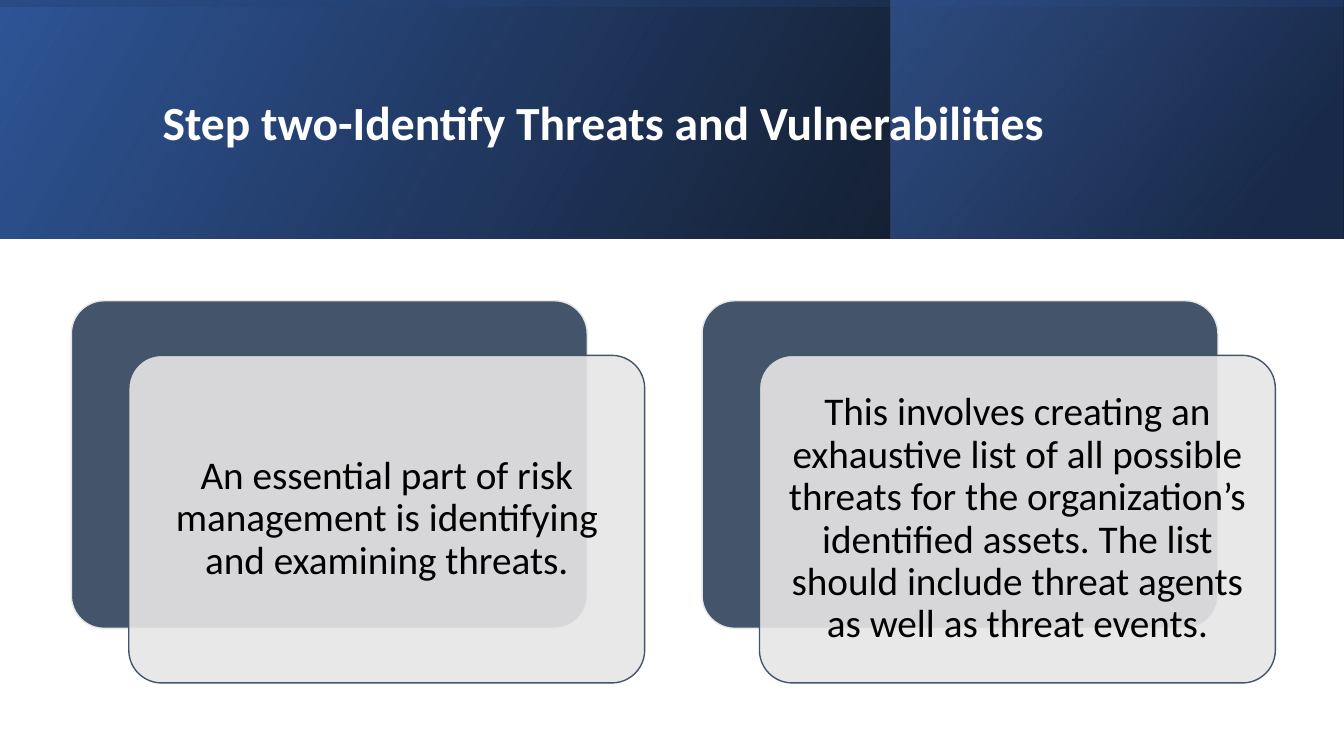
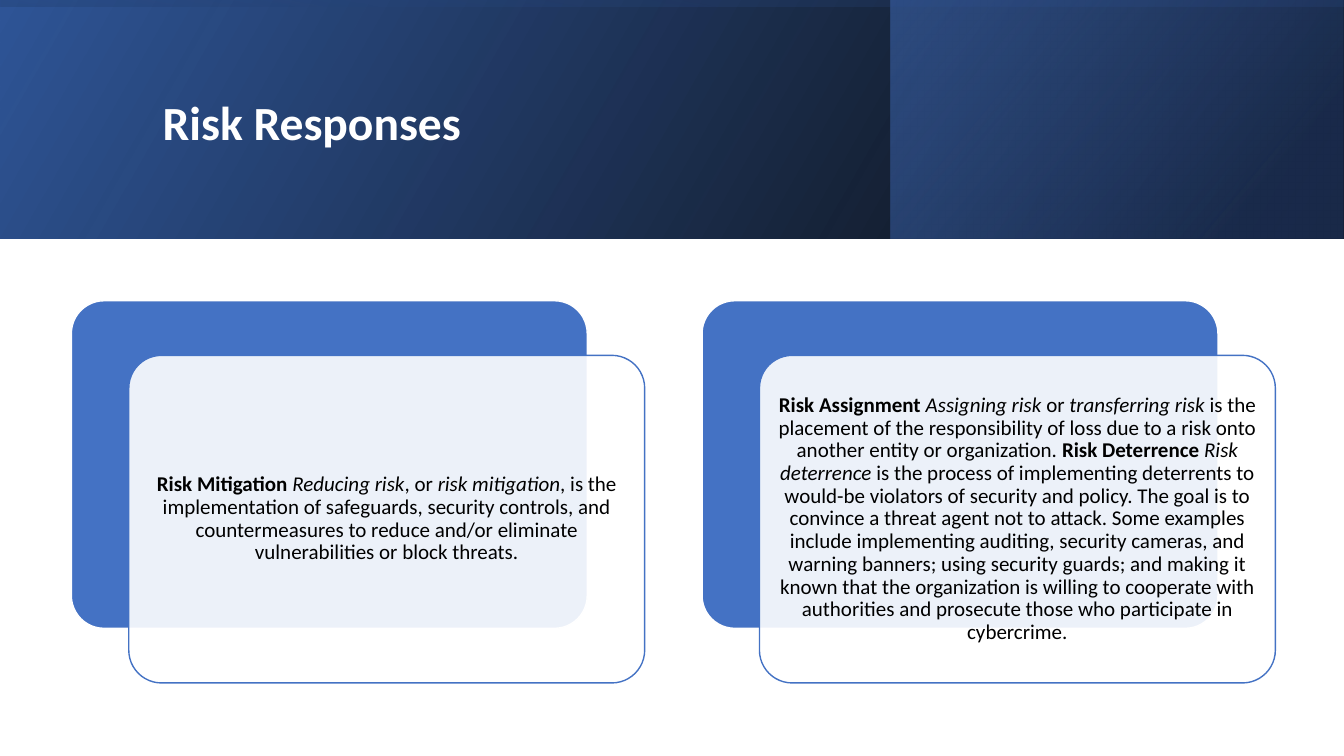
from dataclasses import dataclass

from pptx import Presentation
from pptx.dml.color import RGBColor
from pptx.enum.shapes import MSO_SHAPE
from pptx.enum.text import MSO_ANCHOR, PP_ALIGN
from pptx.oxml import parse_xml
from pptx.oxml.ns import nsdecls, qn
from pptx.shapes.autoshape import Shape
from pptx.slide import Slide
from pptx.util import Pt

FONT = "Calibri"
WHITE, BLACK = "FFFFFF", "000000"
PAGE_WIDTH, PAGE_HEIGHT = 960, 540
BAND_HEIGHT = 170.6

CARD_LEFT, CARD_TOP = 51, 214.8
CARD_WIDTH, CARD_HEIGHT = 368.5, 234
CARD_PITCH = 450.5
FRONT_SHIFT_X, FRONT_SHIFT_Y = 41, 39


@dataclass(frozen=True)
class Stop:
    position: int
    color: str
    opacity: int = 100


@dataclass(frozen=True)
class Band:
    left: float
    top: float
    width: float
    height: float
    angle: int
    stops: tuple[Stop, Stop]
    rotation: int = 0


@dataclass(frozen=True)
class Span:
    text: str
    bold: bool = False
    italic: bool = False


@dataclass(frozen=True)
class CardStyle:
    dark: str
    light: str
    size: int
    inset: float


@dataclass(frozen=True)
class Content:
    title: str
    style: CardStyle
    cards: tuple[tuple[Span, ...], ...]


BANDS = (
    Band(0, 0, PAGE_WIDTH, BAND_HEIGHT, 330, (Stop(0, BLACK, 96), Stop(100, "2F5597"))),
    Band(636.5, 0, 322.8, BAND_HEIGHT, 320, (Stop(19, "203864", 68), Stop(100, "4472C4", 48))),
    # Stands upright before its quarter turn, centred on the header.
    Band((PAGE_WIDTH - BAND_HEIGHT) / 2, (BAND_HEIGHT - PAGE_WIDTH) / 2, BAND_HEIGHT, PAGE_WIDTH,
         350, (Stop(23, "2F5597", 16), Stop(99, BLACK, 45)), rotation=270),
)

SLATE = CardStyle("44546A", "E7E6E6", size=28, inset=8.6)
BLUE = CardStyle("4472C4", WHITE, size=15, inset=4.3)

CONTENTS = (
    Content("Step two-Identify Threats and Vulnerabilities", SLATE, (
        (Span("An essential part of risk management is identifying and examining threats."),),
        (Span("This involves creating an exhaustive list of all possible threats for the "
              "organization’s identified assets. The list should include threat agents as well "
              "as threat events."),),
    )),
    Content("Risk Responses", BLUE, (
        (Span("Risk Mitigation ", bold=True),
         Span("Reducing risk", italic=True),
         Span(", or "),
         Span("risk mitigation", italic=True),
         Span(", is the implementation of safeguards, security controls, and countermeasures "
              "to reduce and/or eliminate vulnerabilities or block threats.")),
        (Span("Risk Assignment ", bold=True),
         Span("Assigning risk ", italic=True),
         Span("or "),
         Span("transferring risk ", italic=True),
         Span("is the placement of the responsibility of loss due to a risk onto another entity "
              "or organization. "),
         Span("Risk Deterrence ", bold=True),
         Span("Risk deterrence ", italic=True),
         Span("is the process of implementing deterrents to would-be violators of security and "
              "policy. The goal is to convince a threat agent not to attack. Some examples "
              "include implementing auditing, security cameras, and warning banners; using "
              "security guards; and making it known that the organization is willing to "
              "cooperate with authorities and prosecute those who participate in cybercrime.")),
    )),
)


def rgb(color: str) -> RGBColor:
    return RGBColor.from_string(color)


def add_filled_shape(page: Slide, kind: MSO_SHAPE, left: float, top: float,
                     width: float, height: float, color: str) -> Shape:
    shape = page.shapes.add_shape(kind, Pt(left), Pt(top), Pt(width), Pt(height))
    shape.shadow.inherit = False
    shape.fill.solid()
    shape.fill.fore_color.rgb = rgb(color)
    return shape


def set_gradient(shape: Shape, angle: int, stops: tuple[Stop, ...]) -> None:
    """Swap the solid fill for a linear gradient with translucent stops."""
    stop_xml = "".join(
        f'<a:gs pos="{stop.position * 1000}"><a:srgbClr val="{stop.color}">'
        f'<a:alpha val="{stop.opacity * 1000}"/></a:srgbClr></a:gs>'
        for stop in stops
    )
    gradient = parse_xml(
        f'<a:gradFill {nsdecls("a")} rotWithShape="1"><a:gsLst>{stop_xml}</a:gsLst>'
        f'<a:lin ang="{angle * 60000}" scaled="0"/></a:gradFill>'
    )
    properties = shape.element.spPr
    properties.replace(properties.find(qn("a:solidFill")), gradient)


def set_opacity(shape: Shape, percent: int) -> None:
    color = shape.element.spPr.find(qn("a:solidFill")).find(qn("a:srgbClr"))
    color.append(parse_xml(f'<a:alpha {nsdecls("a")} val="{percent * 1000}"/>'))


def add_band(page: Slide, band: Band) -> None:
    """Draw a mirrored gradient band behind the title."""
    shape = add_filled_shape(page, MSO_SHAPE.RECTANGLE, band.left, band.top,
                             band.width, band.height, band.stops[0].color)
    set_gradient(shape, band.angle, band.stops)
    shape.line.fill.background()
    shape.rotation = band.rotation
    shape.element.spPr.find(qn("a:xfrm")).set("flipH", "1")
    page.shapes.title.element.addprevious(shape.element)


def set_title(page: Slide, text: str) -> None:
    title = page.shapes.title
    title.left, title.top, title.width, title.height = Pt(109), Pt(27), Pt(765), Pt(124)
    frame = title.text_frame
    frame.text = text
    frame.vertical_anchor = MSO_ANCHOR.MIDDLE
    para = frame.paragraphs[0]
    para.alignment = PP_ALIGN.LEFT
    para.line_spacing = 0.9
    para.font.name, para.font.size, para.font.bold = FONT, Pt(34), True
    para.font.color.rgb = rgb(WHITE)


def add_panel(page: Slide, left: float, top: float, color: str, outline: str) -> Shape:
    panel = add_filled_shape(page, MSO_SHAPE.ROUNDED_RECTANGLE, left, top,
                             CARD_WIDTH, CARD_HEIGHT, color)
    panel.adjustments[0] = 0.1
    panel.line.color.rgb = rgb(outline)
    panel.line.width = Pt(1)
    return panel


def add_card(page: Slide, left: float, spans: tuple[Span, ...], style: CardStyle) -> None:
    """Draw a dark panel with a translucent text panel shifted over it."""
    add_panel(page, left, CARD_TOP, style.dark, style.light)
    front = add_panel(page, left + FRONT_SHIFT_X, CARD_TOP + FRONT_SHIFT_Y,
                      style.light, style.dark)
    set_opacity(front, 90)
    frame = front.text_frame
    frame.word_wrap = True
    frame.vertical_anchor = MSO_ANCHOR.MIDDLE
    frame.margin_left = frame.margin_right = Pt(style.inset)
    frame.margin_top = frame.margin_bottom = Pt(style.inset)
    para = frame.paragraphs[0]
    para.alignment = PP_ALIGN.CENTER
    para.line_spacing = 0.9
    para.font.name, para.font.size = FONT, Pt(style.size)
    para.font.color.rgb = rgb(BLACK)
    for span in spans:
        run = para.add_run()
        run.text = span.text
        run.font.bold, run.font.italic = span.bold, span.italic


def main() -> None:
    deck = Presentation()
    deck.slide_width, deck.slide_height = Pt(PAGE_WIDTH), Pt(PAGE_HEIGHT)
    title_only = deck.slide_layouts[5]
    for content in CONTENTS:
        page = deck.slides.add_slide(title_only)
        for band in BANDS:
            add_band(page, band)
        set_title(page, content.title)
        for index, spans in enumerate(content.cards):
            add_card(page, CARD_LEFT + index * CARD_PITCH, spans, content.style)
    deck.save("out.pptx")


if __name__ == "__main__":
    main()
